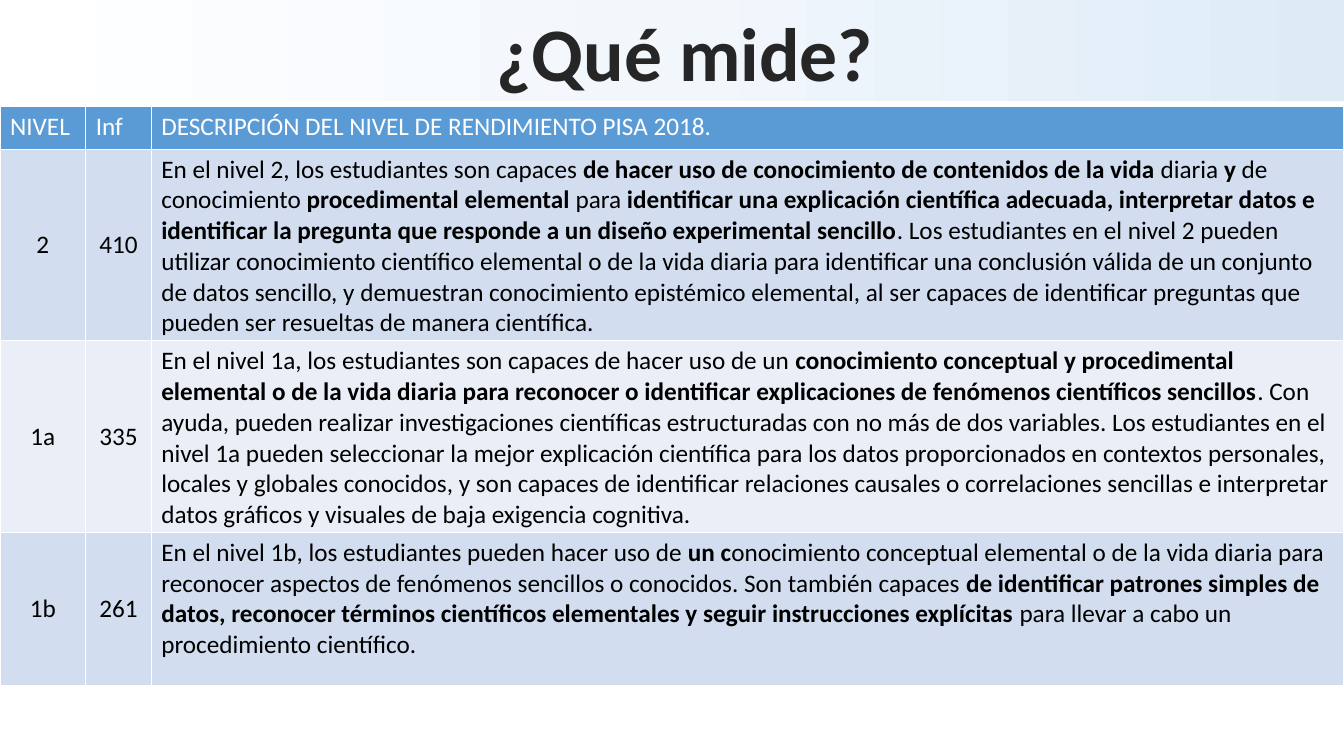
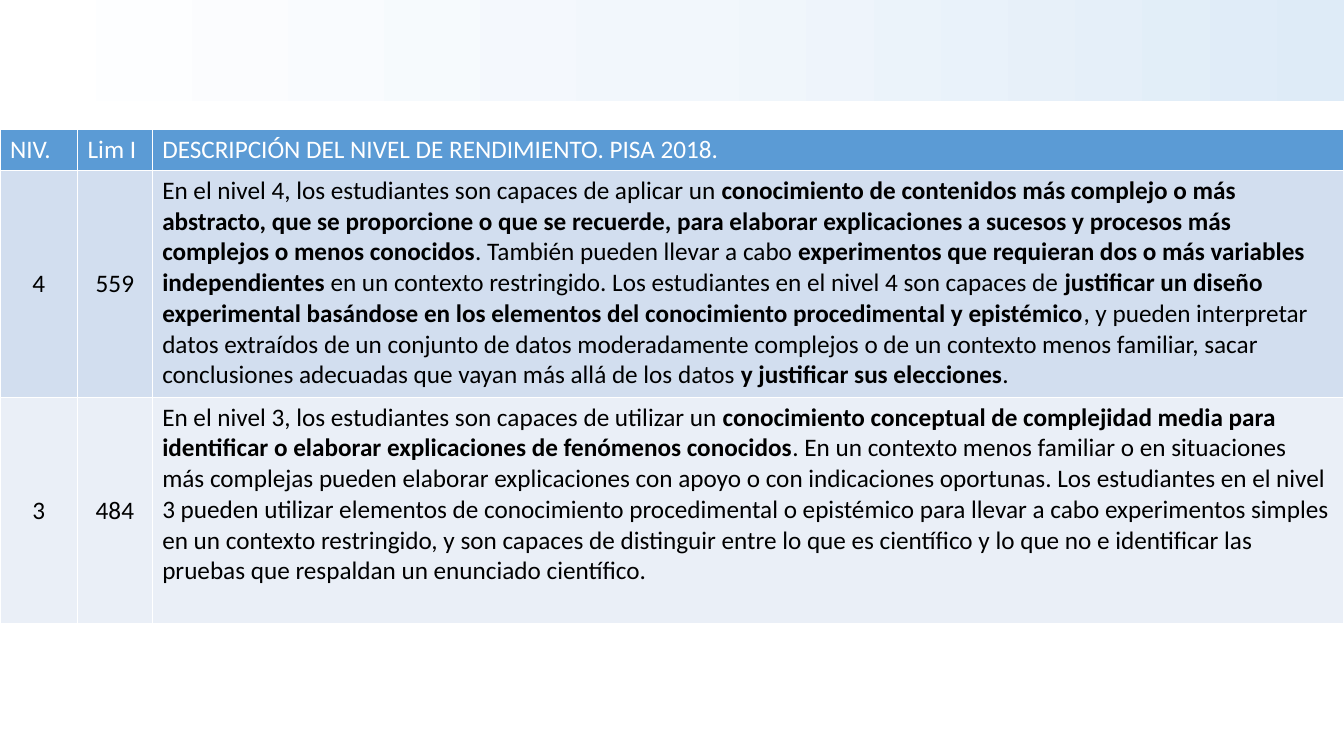
from copy import deepcopy

from pptx import Presentation
from pptx.dml.color import RGBColor
from pptx.enum.shapes import MSO_SHAPE
from pptx.enum.text import MSO_ANCHOR, MSO_AUTO_SIZE, PP_ALIGN
from pptx.oxml.ns import qn
from pptx.util import Inches, Pt

FONT = "Calibri"
SLIDE_WIDTH, SLIDE_HEIGHT = 13.33, 7.5
BAND_HEIGHT = 1
BAND_STOPS = [(0, "DEEBF7"), (0.5, "F2F7FC"), (1, "FFFFFF")]
TITLE_COLOR = "262626"
HEADER_FILL, HEADER_TEXT = "5B9BD5", "FFFFFF"
ROW_FILLS, BODY_TEXT = ["D2DEEF", "EAEFF7"], "000000"
TITLE_ONLY, BLANK = 5, 6

BASIC_LEVELS = [
    ("NIVEL", "Inf", "DESCRIPCIÓN DEL NIVEL DE RENDIMIENTO PISA 2018."),
    ("2", "410",
     "En el nivel 2, los estudiantes son capaces **de hacer uso de conocimiento de contenidos "
     "de la vida **diaria **y** de conocimiento **procedimental elemental **para **identificar "
     "una explicación científica adecuada, interpretar datos e identificar la pregunta que "
     "responde a un diseño experimental sencillo**. Los estudiantes en el nivel 2 pueden "
     "utilizar conocimiento científico elemental o de la vida diaria para identificar una "
     "conclusión válida de un conjunto de datos sencillo, y demuestran conocimiento epistémico "
     "elemental, al ser capaces de identificar preguntas que pueden ser resueltas de manera "
     "científica."),
    ("1a", "335",
     "En el nivel 1a, los estudiantes son capaces de hacer uso de un **conocimiento conceptual "
     "y procedimental elemental o de la vida diaria para reconocer o identificar explicaciones "
     "de fenómenos científicos sencillos**. Con ayuda, pueden realizar investigaciones "
     "científicas estructuradas con no más de dos variables. Los estudiantes en el nivel 1a "
     "pueden seleccionar la mejor explicación científica para los datos proporcionados en "
     "contextos personales, locales y globales conocidos, y son capaces de identificar "
     "relaciones causales o correlaciones sencillas e interpretar datos gráficos y visuales de "
     "baja exigencia cognitiva."),
    ("1b", "261",
     "En el nivel 1b, los estudiantes pueden hacer uso de **un c**onocimiento conceptual "
     "elemental o de la vida diaria para reconocer aspectos de fenómenos sencillos o conocidos. "
     "Son también capaces **de identificar patrones simples de datos, reconocer términos "
     "científicos elementales y seguir instrucciones explícitas **para llevar a cabo un "
     "procedimiento científico."),
]

MIDDLE_LEVELS = [
    ("NIV.", "Lim I", "DESCRIPCIÓN DEL NIVEL DE RENDIMIENTO. PISA 2018."),
    ("4", "559",
     "En el nivel 4, los estudiantes son capaces de aplicar un **conocimiento de contenidos más "
     "complejo o más abstracto, que se proporcione o que se recuerde, para elaborar "
     "explicaciones a sucesos y procesos más complejos o menos conocidos**. También pueden "
     "llevar a cabo **experimentos que requieran dos o más variables independientes **en un "
     "contexto restringido. Los estudiantes en el nivel 4 son capaces de **justificar un diseño "
     "experimental basándose en los elementos del conocimiento procedimental y epistémico**, y "
     "pueden interpretar datos extraídos de un conjunto de datos moderadamente complejos o de "
     "un contexto menos familiar, sacar conclusiones adecuadas que vayan más allá de los datos "
     "**y justificar sus elecciones**."),
    ("3", "484",
     "En el nivel 3, los estudiantes son capaces de utilizar un **conocimiento conceptual de "
     "complejidad media para identificar o elaborar explicaciones de fenómenos conocidos**. En "
     "un contexto menos familiar o en situaciones más complejas pueden elaborar explicaciones "
     "con apoyo o con indicaciones oportunas. Los estudiantes en el nivel 3 pueden utilizar "
     "elementos de conocimiento procedimental o epistémico para llevar a cabo experimentos "
     "simples en un contexto restringido, y son capaces de distinguir entre lo que es "
     "científico y lo que no e identificar las pruebas que respaldan un enunciado científico."),
]


def rgb(code):
    """Turn a hex string into a colour."""
    return RGBColor.from_string(code)


def style_font(font, size, color, bold=False):
    """Apply the deck font with a size, colour and weight."""
    font.name, font.size, font.bold = FONT, Pt(size), bold
    font.color.rgb = rgb(color)


def move_band_to_master(prs, slide):
    """Draw the gradient band and place it behind everything on the master."""
    band = slide.shapes.add_shape(
        MSO_SHAPE.RECTANGLE, 0, 0, Inches(SLIDE_WIDTH), Inches(BAND_HEIGHT))
    band.shadow.inherit = False
    band.line.fill.background()
    band.fill.gradient()
    band.fill.gradient_angle = 180
    stop_list = band.element.find(".//" + qn("a:gsLst"))
    stop_list.append(deepcopy(stop_list[0]))
    for stop, (position, color) in zip(band.fill.gradient_stops, BAND_STOPS):
        stop.position = position
        stop.color.rgb = rgb(color)
    prs.slide_master.shapes.element.insert(2, band.element)


def set_title(slide, wording):
    """Fill the title placeholder, centred over the band."""
    title = slide.shapes.title
    title.left, title.top = Inches(4.81), 0
    title.width, title.height = Inches(3.97), Inches(1.01)
    frame = title.text_frame
    frame.text = wording
    frame.word_wrap = False
    frame.auto_size = MSO_AUTO_SIZE.SHAPE_TO_FIT_TEXT
    heading = frame.paragraphs[0]
    heading.alignment = PP_ALIGN.CENTER
    style_font(heading.runs[0].font, 54, TITLE_COLOR, bold=True)


def fill_cell(cell, marked_text, fill, color, centered):
    """Write a cell whose bold passages stand between double asterisks."""
    cell.fill.solid()
    cell.fill.fore_color.rgb = rgb(fill)
    paragraph = cell.text_frame.paragraphs[0]
    for index, passage in enumerate(marked_text.split("**")):
        run = paragraph.add_run()
        run.text = passage
        style_font(run.font, 18, color, bold=index % 2 == 1)
    if centered:
        cell.vertical_anchor = MSO_ANCHOR.MIDDLE
        paragraph.alignment = PP_ALIGN.CENTER


def add_level_table(slide, top, widths, heights, levels):
    """Add a full-width table of performance levels with alternating rows."""
    table = slide.shapes.add_table(
        len(levels), len(widths), 0, Inches(top),
        Inches(sum(widths)), Inches(sum(heights))).table
    for column, width in zip(table.columns, widths):
        column.width = Inches(width)
    for row_index, (row, height, level) in enumerate(zip(table.rows, heights, levels)):
        row.height = Inches(height)
        is_header = row_index == 0
        fill = HEADER_FILL if is_header else ROW_FILLS[(row_index - 1) % 2]
        color = HEADER_TEXT if is_header else BODY_TEXT
        for column_index, (cell, wording) in enumerate(zip(row.cells, level)):
            fill_cell(cell, wording, fill, color, not is_header and column_index < 2)


def main():
    """Build and save the two slides."""
    prs = Presentation()
    prs.slide_width, prs.slide_height = Inches(SLIDE_WIDTH), Inches(SLIDE_HEIGHT)

    basic = prs.slides.add_slide(prs.slide_layouts[TITLE_ONLY])
    move_band_to_master(prs, basic)
    add_level_table(basic, 1.06, [0.85, 0.65, 11.83], [0.42, 1.81, 1.81, 1.52], BASIC_LEVELS)
    set_title(basic, "¿Qué mide?")

    middle = prs.slides.add_slide(prs.slide_layouts[BLANK])
    add_level_table(middle, 1.28, [0.77, 0.74, 11.82], [0.41, 2.25, 2.25], MIDDLE_LEVELS)

    prs.save("out.pptx")


if __name__ == "__main__":
    main()
